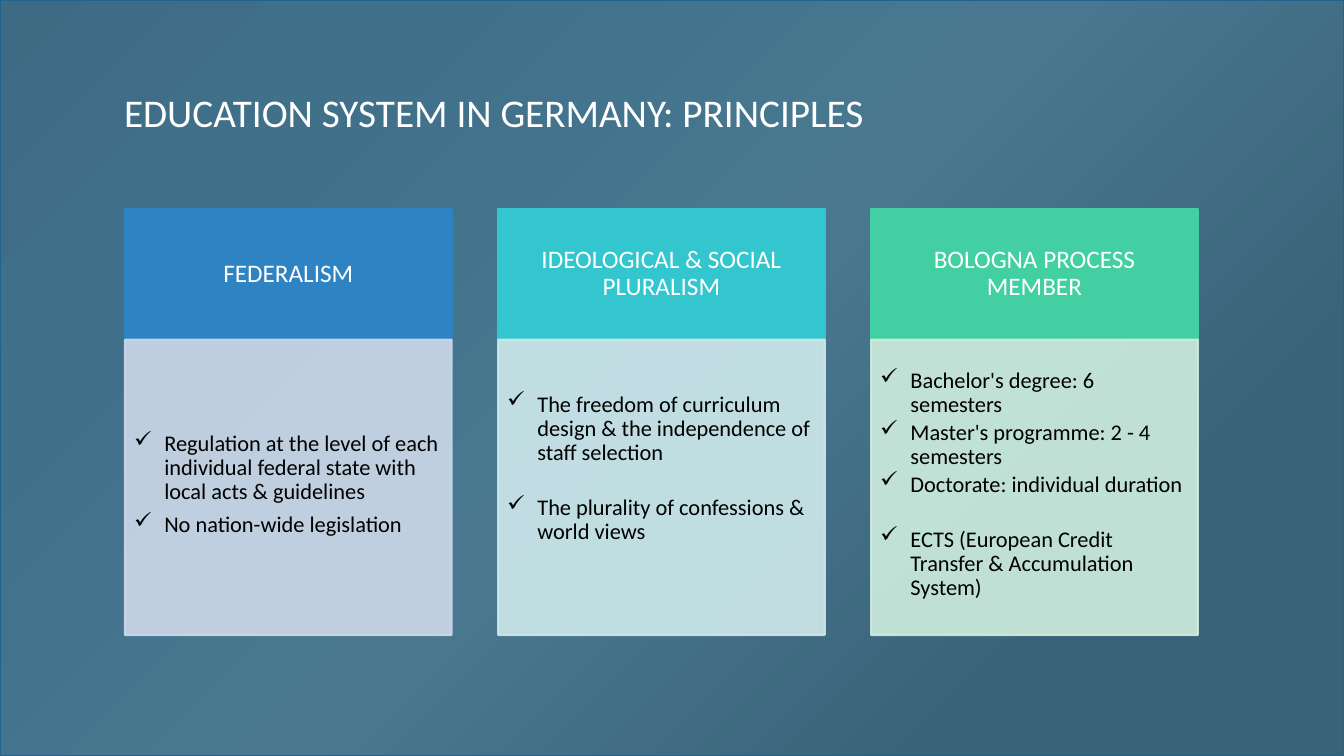
import lxml.etree
import pptx
import pptx.dml.color
import pptx.enum.shapes
import pptx.enum.text
import pptx.oxml.ns
import pptx.util

RGBColor = pptx.dml.color.RGBColor
WHITE = RGBColor(0xFF, 0xFF, 0xFF)
BLACK = RGBColor(0x00, 0x00, 0x00)
VEIL = RGBColor(0x61, 0x93, 0xAD)
VEIL_EDGE = RGBColor(0x22, 0x62, 0x92)
BLUE = RGBColor(0x2E, 0x83, 0xC3)
PALE_BLUE = RGBColor(0xCD, 0xD9, 0xE9)
TEAL = RGBColor(0x34, 0xC6, 0xCE)
PALE_TEAL = RGBColor(0xCE, 0xE9, 0xEC)
GREEN = RGBColor(0x42, 0xD0, 0xA2)
PALE_GREEN = RGBColor(0xCF, 0xEE, 0xE0)
BACKGROUND_STOPS = [
    (0, RGBColor(0x26, 0x50, 0x68)),
    (21, RGBColor(0x2A, 0x58, 0x72)),
    (50, RGBColor(0x3A, 0x66, 0x7E)),
    (80, RGBColor(0x1F, 0x42, 0x55)),
    (99, RGBColor(0x1F, 0x42, 0x55)),
]

WIDTH, HEIGHT = 13.33, 7.5
GRID_LEFT, COLUMN_WIDTH, COLUMN_PITCH = 1.24, 3.24, 3.7
HEADER_TOP, HEADER_HEIGHT, BODY_HEIGHT = 2.07, 1.3, 2.93
TIGHT, LOOSE, SECTION = 2.4, 6, 22  # space after an item, in points

# header, header colour, body colour, bottom inset of the body, (item, space after)
PRINCIPLES = [
    ("FEDERALISM", BLUE, PALE_BLUE, 0.14, [
        ("Regulation at the level of each individual federal state with "
         "local acts & guidelines", LOOSE),
        ("No nation-wide legislation", LOOSE),
    ]),
    ("IDEOLOGICAL & SOCIAL PLURALISM", TEAL, PALE_TEAL, 0.46, [
        ("The freedom of curriculum design & the independence of staff selection", SECTION),
        ("The plurality of confessions & world views", TIGHT),
    ]),
    ("BOLOGNA PROCESS MEMBER", GREEN, PALE_GREEN, 0.14, [
        ("Bachelor's degree: 6 semesters", TIGHT),
        ("Master's programme: 2 - 4 semesters", TIGHT),
        ("Doctorate: individual duration", SECTION),
        ("ECTS (European Credit Transfer & Accumulation System)", TIGHT),
    ]),
]


def set_attributes(target, values):
    for name, value in values.items():
        setattr(target, name, value)


def add_element(parent, tag, **attributes):
    return lxml.etree.SubElement(parent, pptx.oxml.ns.qn(tag), attributes)


class PrinciplesSlide:
    """Holds the slide and its style; lengths are inches unless stated."""

    font_name = "Calibri"
    line_width = pptx.util.Pt(1.5)

    def __init__(self, presentation):
        self.slide = presentation.slides.add_slide(presentation.slide_layouts[5])

    def background(self, stops):
        """Diagonal gradient with a translucent veil behind all other shapes."""
        fill = self.slide.background.fill
        fill.gradient()
        fill.gradient_angle = 315
        stop_list = fill.gradient_stops[0]._gs.getparent()
        for old_stop in list(stop_list):
            stop_list.remove(old_stop)
        for percent, color in stops:
            stop = add_element(stop_list, "a:gs", pos=str(percent * 1000))
            add_element(stop, "a:srgbClr", val=str(color))
        veil = self.rectangle((0, 0, WIDTH, HEIGHT), VEIL, 41, VEIL_EDGE)
        self.slide.shapes._spTree.insert(2, veil._element)

    def rectangle(self, box, color, opacity=100, edge=None):
        """Edge takes the fill's colour and opacity unless it has its own colour."""
        shape = self.slide.shapes.add_shape(
            pptx.enum.shapes.MSO_SHAPE.RECTANGLE, *map(pptx.util.Inches, box))
        shape.shadow.inherit = False
        shape.line.width = self.line_width
        for fill, fill_color in ((shape.fill, color), (shape.line.fill, edge or color)):
            fill.solid()
            fill.fore_color.rgb = fill_color
        if opacity < 100:
            colors = list(shape._element.spPr.iter(pptx.oxml.ns.qn("a:srgbClr")))
            for color_element in colors[:1] if edge else colors:
                add_element(color_element, "a:alpha", val=str(opacity * 1000))
        return shape

    def frame(self, shape, insets):
        frame = shape.text_frame
        left, top, right, bottom = map(pptx.util.Inches, insets)
        set_attributes(frame, {
            "word_wrap": True,
            "auto_size": pptx.enum.text.MSO_AUTO_SIZE.NONE,
            "vertical_anchor": pptx.enum.text.MSO_ANCHOR.MIDDLE,
            "margin_left": left, "margin_top": top,
            "margin_right": right, "margin_bottom": bottom,
        })
        return frame

    def set_text(self, paragraph, text, size, color, alignment="LEFT", space_after=0, spacing=0.9):
        paragraph.text = text
        set_attributes(paragraph, {
            "alignment": getattr(pptx.enum.text.PP_ALIGN, alignment),
            "line_spacing": spacing,
            "space_after": pptx.util.Pt(space_after),
        })
        set_attributes(paragraph.font, {"name": self.font_name, "size": pptx.util.Pt(size)})
        paragraph.font.color.rgb = color

    def title(self, text):
        title = self.slide.shapes.title
        box = map(pptx.util.Inches, (1.13, 0.7, 12.2, 0.82))
        set_attributes(title, dict(zip(("left", "top", "width", "height"), box)))
        frame = self.frame(title, (0.1, 0.05, 0.1, 0.05))
        self.set_text(frame.paragraphs[0], text, 28, WHITE, spacing=1.0)

    def header(self, column, text, color):
        box = (self.column_left(column), HEADER_TOP, COLUMN_WIDTH, HEADER_HEIGHT)
        frame = self.frame(self.rectangle(box, color), (0.14, 0.08, 0.14, 0.08))
        self.set_text(frame.paragraphs[0], text, 18, WHITE, "CENTER")

    def checklist(self, column, items, color, bottom_inset):
        box = (self.column_left(column), HEADER_TOP + HEADER_HEIGHT, COLUMN_WIDTH, BODY_HEIGHT)
        frame = self.frame(self.rectangle(box, color, 90), (0.09, 0.09, 0.12, bottom_inset))
        for index, (text, space_after) in enumerate(items):
            paragraph = frame.add_paragraph() if index else frame.paragraphs[0]
            properties = paragraph._p.get_or_add_pPr()
            indent = pptx.util.Inches(0.3)
            properties.set("marL", str(indent))
            properties.set("indent", str(-indent))
            add_element(properties, "a:buChar", char="✓")
            self.set_text(paragraph, text, 16, BLACK, space_after=space_after)

    @staticmethod
    def column_left(column):
        return GRID_LEFT + column * COLUMN_PITCH


def main():
    presentation = pptx.Presentation()
    presentation.slide_width = pptx.util.Inches(WIDTH)
    presentation.slide_height = pptx.util.Inches(HEIGHT)
    slide = PrinciplesSlide(presentation)
    slide.background(BACKGROUND_STOPS)
    slide.title("EDUCATION SYSTEM IN GERMANY: PRINCIPLES")
    for column, (name, color, pale_color, bottom_inset, items) in enumerate(PRINCIPLES):
        slide.header(column, name, color)
        slide.checklist(column, items, pale_color, bottom_inset)
    presentation.save("out.pptx")


if __name__ == "__main__":
    main()
